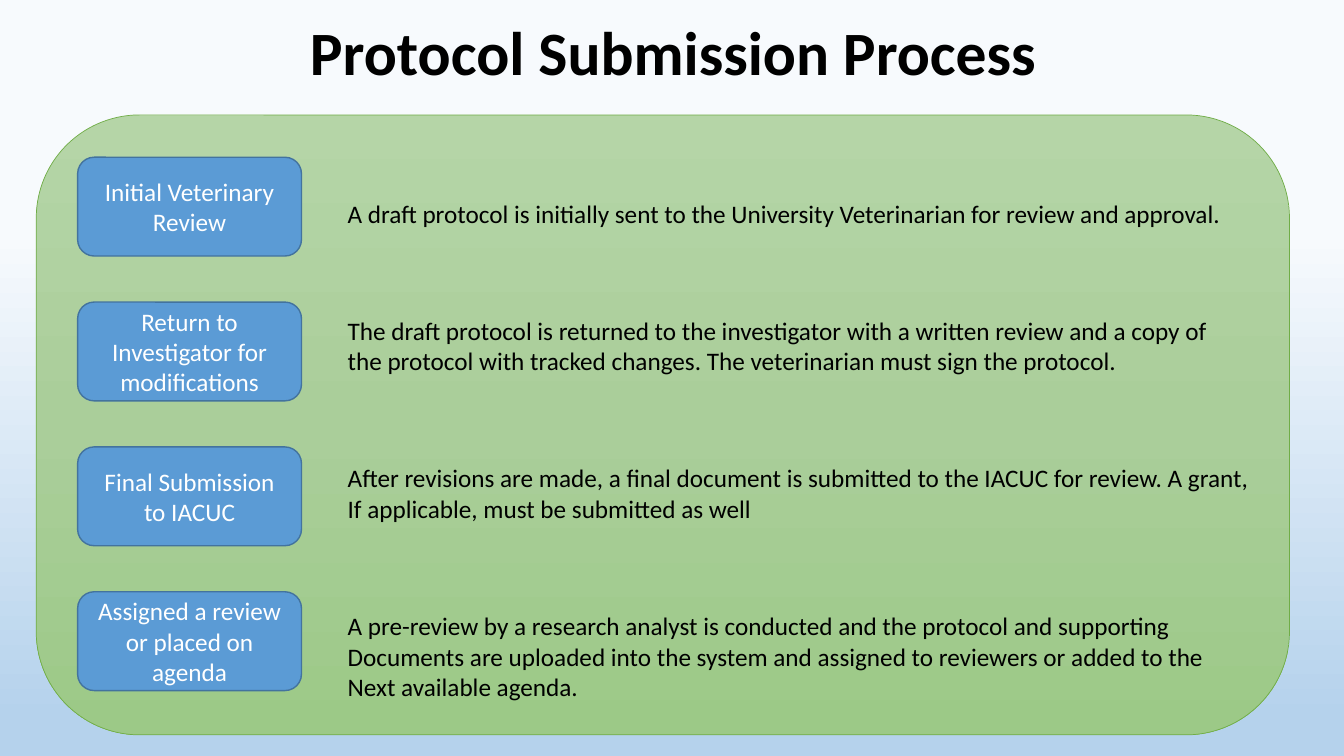
"""Build the protocol submission process slide."""
from copy import deepcopy

from pptx import Presentation
from pptx.dml.color import RGBColor
from pptx.enum.shapes import MSO_SHAPE
from pptx.enum.text import MSO_ANCHOR, MSO_AUTO_SIZE, PP_ALIGN
from pptx.oxml.ns import qn
from pptx.util import Inches, Pt

TITLE = "Protocol Submission Process"
STEPS = [
    ("Initial Veterinary Review", 1.92, 8.97,
     ["A draft protocol is initially sent to the University Veterinarian for review and approval."]),
    ("Return to Investigator for modifications", 3.08, 8.9,
     ["The draft protocol is returned to the investigator with a written review and a copy of",
      "the protocol with tracked changes. The veterinarian must sign the protocol."]),
    ("Final Submission to IACUC", 4.54, 9.31,
     ["After revisions are made, a final document is submitted to the IACUC for review. A grant,",
      "If applicable, must be submitted as well"]),
    ("Assigned a review or placed on agenda", 6.01, 8.79,
     ["A pre-review by a research analyst is conducted and the protocol and supporting",
      "Documents are uploaded into the system and assigned to reviewers or added to the",
      "Next available agenda."]),
]
SKY = [(31, "F7FAFD"), (95, "B5D2EC")]
GREEN = [(0, "B5D5A7"), (50, "AACE9A"), (100, "9CC987")]
TOP, STEP = 1.56, 1.437
LINE, PAD = 0.3, 0.1


def color(code):
    return RGBColor.from_string(code)


def blend(fill, root, stops):
    fill.gradient()
    fill.gradient_angle = 270
    group = next(root.iter(qn("a:gsLst")))
    while len(group) < len(stops):
        group.append(deepcopy(group[0]))
    for stop, (place, code) in zip(fill.gradient_stops, stops):
        stop.position = place / 100
        stop.color.rgb = color(code)


def style(frame, size, code, align, bold=False):
    for para in frame.paragraphs:
        para.alignment = align
        for run in para.runs:
            run.font.name = "Calibri"
            run.font.size = Pt(size)
            run.font.bold = bold
            run.font.color.rgb = color(code)


def add_box(slide, left, top, width, height, edge, weight):
    box = slide.shapes.add_shape(MSO_SHAPE.ROUNDED_RECTANGLE, Inches(left),
                                 Inches(top), Inches(width), Inches(height))
    box.shadow.inherit = False
    box.line.color.rgb = color(edge)
    box.line.width = Pt(weight)
    return box


def add_step(slide, top, label):
    box = add_box(slide, 0.77, top, 2.22, 0.98, "43739E", 1)
    box.fill.solid()
    box.fill.fore_color.rgb = color("5B9BD5")
    frame = box.text_frame
    frame.text = label
    frame.word_wrap = True
    frame.vertical_anchor = MSO_ANCHOR.MIDDLE
    style(frame, 18, "FFFFFF", PP_ALIGN.CENTER)


def add_note(slide, top, width, lines):
    note = slide.shapes.add_textbox(Inches(3.35), Inches(top), Inches(width),
                                    Inches(PAD + LINE * len(lines)))
    frame = note.text_frame
    frame.text = "\n".join(lines)
    frame.word_wrap = False
    frame.auto_size = MSO_AUTO_SIZE.SHAPE_TO_FIT_TEXT
    style(frame, 18, "000000", PP_ALIGN.LEFT)


def set_title(slide):
    title = slide.shapes.title
    title.left, title.top = Inches(0.93), Inches(0.17)
    title.width, title.height = Inches(11.5), Inches(0.76)
    frame = title.text_frame
    frame.text = TITLE
    frame.vertical_anchor = MSO_ANCHOR.MIDDLE
    frame.auto_size = MSO_AUTO_SIZE.NONE
    frame.paragraphs[0].line_spacing = 0.9
    style(frame, 44, "000000", PP_ALIGN.CENTER, True)


def main():
    deck = Presentation()
    deck.slide_width, deck.slide_height = Inches(13.33), Inches(7.5)
    slide = deck.slides.add_slide(deck.slide_layouts[5])
    blend(slide.background.fill, slide.element, SKY)
    set_title(slide)
    panel = add_box(slide, 0.36, 1.14, 12.43, 6.15, "70AD47", 0.5)
    blend(panel.fill, panel.element, GREEN)
    for row, (label, top, width, lines) in enumerate(STEPS):
        add_step(slide, TOP + row * STEP, label)
        add_note(slide, top, width, lines)
    deck.save("out.pptx")


if __name__ == "__main__":
    main()
